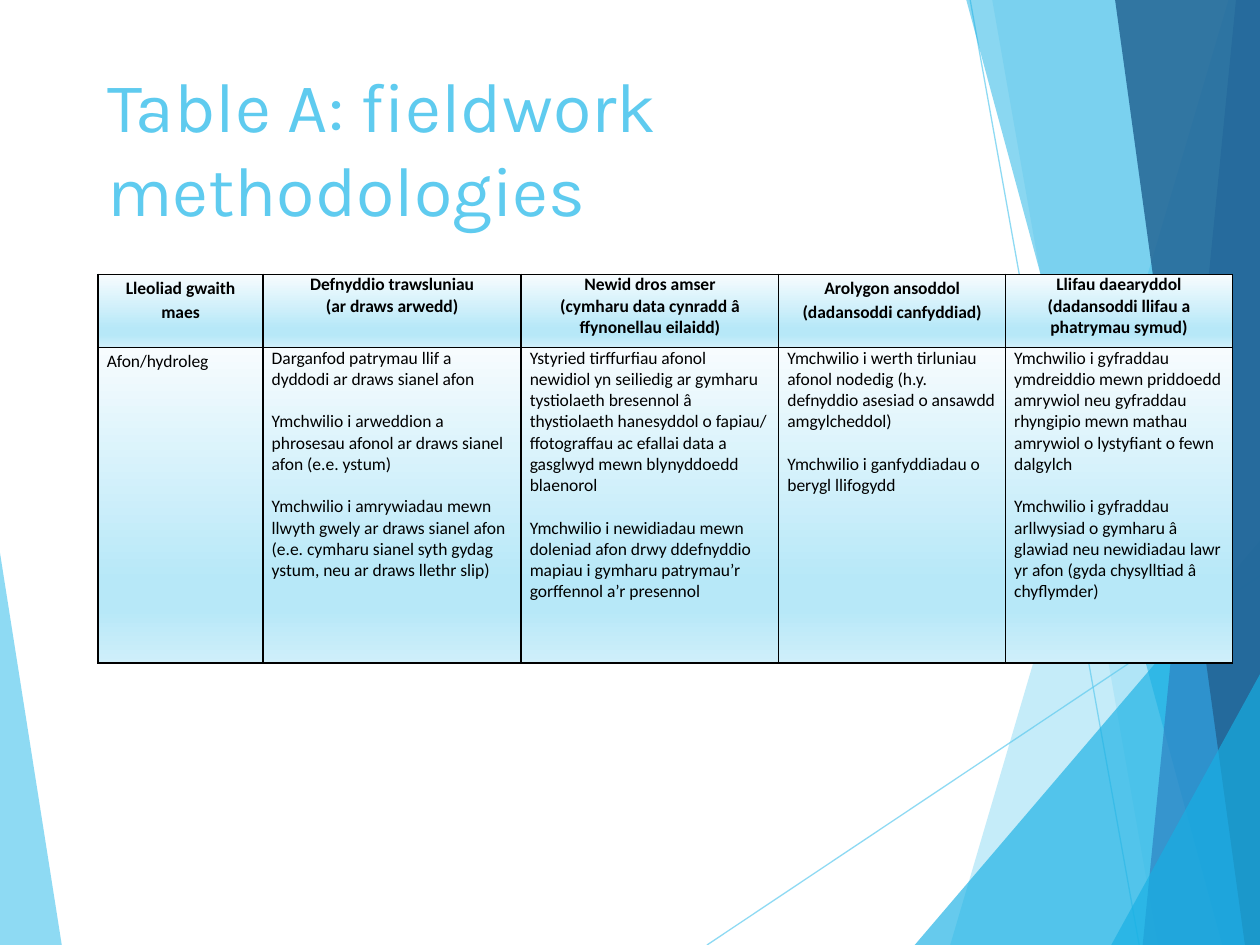
from dataclasses import dataclass

from lxml.etree import SubElement
from pptx import Presentation
from pptx.dml.color import RGBColor as RGB
from pptx.enum.shapes import MSO_CONNECTOR as Link
from pptx.enum.text import MSO_ANCHOR as Anchor, PP_ALIGN as Align
from pptx.oxml.ns import qn
from pptx.util import Pt


@dataclass(frozen=True)
class Theme:
    sky: str = "5FCBEF"
    cyan: str = "17B0E4"
    blue: str = "2E83C3"
    navy: str = "226292"
    ink: str = "000000"
    fade: tuple = ((0, "F7FCFE"), (74, "B7E8F8"), (83, "B7E8F8"), (100, "CFEFFA"))
    head: str = "Karla"
    body: str = "Calibri"
    big: int = 40
    small: int = 10


@dataclass(frozen=True)
class Facet:
    points: tuple
    color: str
    alpha: int


@dataclass(frozen=True)
class Ray:
    start: tuple
    end: tuple


@dataclass(frozen=True)
class Entry:
    paras: tuple
    gap: float = 0
    lead: float = 1.0


THEME = Theme()
WIDE, HIGH = 720, 540


def band(top: float, foot: float, color: str, alpha: int) -> Facet:
    """Full-height area from a slanted left side to the right slide edge."""
    return Facet(((top, 0), (foot, HIGH), (WIDE, HIGH), (WIDE, 0)), color, alpha)


def wedge(foot: float, rise: float, color: str, alpha: int) -> Facet:
    """Triangle in the bottom right corner."""
    return Facet(((foot, HIGH), (WIDE, rise), (WIDE, HIGH)), color, alpha)


DECOR = (
    Facet(((0, 316), (35.3, HIGH), (0, HIGH)), THEME.sky, 70),
    Ray((404, HIGH), (WIDE, 329)),
    Ray((554.4, 0), (651, HIGH)),
    band(702, 543, THEME.sky, 36),
    band(567, 661.7, THEME.sky, 20),
    wedge(522.7, 309, THEME.cyan, 66),
    band(552.2, 698.4, THEME.cyan, 50),
    band(706.3, 653, THEME.blue, 70),
    band(637.2, 711.4, THEME.navy, 82),
    wedge(635, 385.2, THEME.cyan, 66),
)

COLS = (94.3, 147.5, 147.2, 129.6, 129.6)
ROWS = (41.8, 180.4)
GAP = 12.2
CELLS = (
    (
        Entry(("Lleoliad gwaith maes",), lead=1.15),
        Entry(("Defnyddio trawsluniau", "(ar draws arwedd)")),
        Entry(("Newid dros amser", "(cymharu data cynradd â ffynonellau eilaidd)")),
        Entry(("Arolygon ansoddol (dadansoddi canfyddiad)",), lead=1.15),
        Entry(("Llifau daearyddol", "(dadansoddi llifau a phatrymau symud)")),
    ),
    (
        Entry(("Afon/hydroleg",), lead=1.15),
        Entry((
            "Darganfod patrymau llif a dyddodi ar draws sianel afon",
            "Ymchwilio i arweddion a phrosesau afonol ar draws sianel afon (e.e. ystum)",
            "Ymchwilio i amrywiadau mewn llwyth gwely ar draws sianel afon "
            "(e.e. cymharu sianel syth gydag ystum, neu ar draws llethr slip)",
        ), GAP),
        Entry((
            "Ystyried tirffurfiau afonol newidiol yn seiliedig ar gymharu "
            "tystiolaeth bresennol â thystiolaeth hanesyddol o fapiau/ "
            "ffotograffau ac efallai data a gasglwyd mewn blynyddoedd blaenorol",
            "Ymchwilio i newidiadau mewn doleniad afon drwy ddefnyddio mapiau "
            "i gymharu patrymau’r gorffennol a’r presennol",
        ), GAP),
        Entry((
            "Ymchwilio i werth tirluniau afonol nodedig (h.y. defnyddio "
            "asesiad o ansawdd amgylcheddol)",
            "Ymchwilio i ganfyddiadau o berygl llifogydd",
        ), GAP),
        Entry((
            "Ymchwilio i gyfraddau ymdreiddio mewn priddoedd amrywiol neu "
            "gyfraddau rhyngipio mewn mathau amrywiol o lystyfiant o fewn dalgylch",
            "Ymchwilio i gyfraddau arllwysiad o gymharu â glawiad neu newidiadau "
            "lawr yr afon (gyda chysylltiad â chyflymder)",
        ), GAP),
    ),
)


def add_tag(node, name: str, **attrs):
    return SubElement(node, qn(name), **attrs)


def set_alpha(fill, alpha: int) -> None:
    color = fill._xPr.find(".//" + qn("a:srgbClr"))
    add_tag(color, "a:alpha", val=str(alpha * 1000))


def draw_facet(slide, facet: Facet) -> None:
    first, *rest = [(Pt(x), Pt(y)) for x, y in facet.points]
    pen = slide.shapes.build_freeform(*first)
    pen.add_line_segments(rest, close=True)
    shape = pen.convert_to_shape()
    shape.shadow.inherit = False
    shape.line.fill.background()
    shape.fill.solid()
    shape.fill.fore_color.rgb = RGB.from_string(facet.color)
    set_alpha(shape.fill, facet.alpha)


def draw_ray(slide, ray: Ray) -> None:
    ends = [Pt(v) for v in ray.start + ray.end]
    link = slide.shapes.add_connector(Link.STRAIGHT, *ends)
    link.line.width = Pt(0.75)
    link.line.color.rgb = RGB.from_string(THEME.sky)
    set_alpha(link.line.fill, 70)
    add_tag(link._element.spPr, "a:effectLst")


def set_font(para, face: str, size: float, color: str, bold: bool = False) -> None:
    for run in para.runs:
        font = run.font
        font.name, font.size, font.bold = face, Pt(size), bold
        font.color.rgb = RGB.from_string(color)


def style_cell(cell) -> None:
    """Give a cell black borders and the vertical fade."""
    props = cell._tc.get_or_add_tcPr()
    for side in "LRTB":
        line = add_tag(props, f"a:ln{side}", w=str(Pt(1)))
        add_tag(add_tag(line, "a:solidFill"), "a:srgbClr", val=THEME.ink)
    grad = add_tag(props, "a:gradFill", rotWithShape="1")
    stops = add_tag(grad, "a:gsLst")
    for place, color in THEME.fade:
        stop = add_tag(stops, "a:gs", pos=str(place * 1000))
        add_tag(stop, "a:srgbClr", val=color)
    add_tag(grad, "a:lin", ang="5400000", scaled="0")


def fill_cell(cell, entry: Entry, head: bool) -> None:
    cell.margin_left = cell.margin_right = Pt(5)
    cell.margin_top = cell.margin_bottom = Pt(0)
    style_cell(cell)
    cell.text_frame.text = "\n".join(entry.paras)
    for i, para in enumerate(cell.text_frame.paragraphs):
        para.alignment = Align.CENTER if head else Align.LEFT
        para.line_spacing = entry.lead
        para.space_before = Pt(entry.gap if i else 0)
        set_font(para, THEME.body, THEME.small, THEME.ink, head)


def draw_table(slide) -> None:
    table = slide.shapes.add_table(
        len(ROWS), len(COLS), Pt(56), Pt(156.8), Pt(sum(COLS)), Pt(sum(ROWS))
    ).table
    table.first_row = table.horz_banding = False
    for col, width in zip(table.columns, COLS):
        col.width = Pt(width)
    for r, (height, entries) in enumerate(zip(ROWS, CELLS)):
        table.rows[r].height = Pt(height)
        for c, entry in enumerate(entries):
            fill_cell(table.cell(r, c), entry, head=r == 0)


def set_title(slide, text: str) -> None:
    title = slide.shapes.title
    title.left, title.top, title.width, title.height = map(Pt, (54, 31.7, 499.7, 103.7))
    frame = title.text_frame
    frame.text = text
    frame.word_wrap = True
    frame.vertical_anchor = Anchor.BOTTOM
    para = frame.paragraphs[0]
    para.alignment = Align.LEFT
    set_font(para, THEME.head, THEME.big, THEME.sky)


def main() -> None:
    deck = Presentation()
    deck.slide_width, deck.slide_height = Pt(WIDE), Pt(HIGH)
    slide = deck.slides.add_slide(deck.slide_layouts[5])
    for item in DECOR:
        if isinstance(item, Ray):
            draw_ray(slide, item)
        else:
            draw_facet(slide, item)
    set_title(slide, "Table A: fieldwork methodologies")
    draw_table(slide)
    deck.save("out.pptx")


if __name__ == "__main__":
    main()
